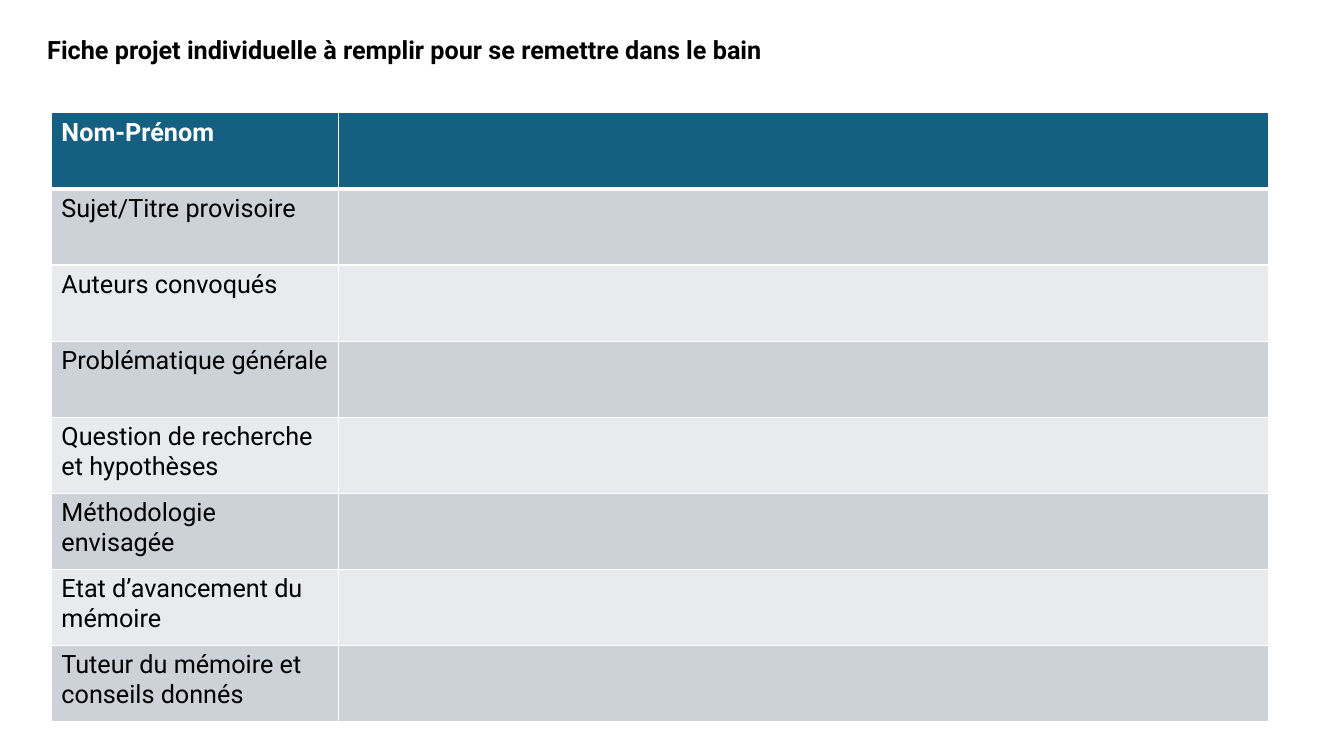
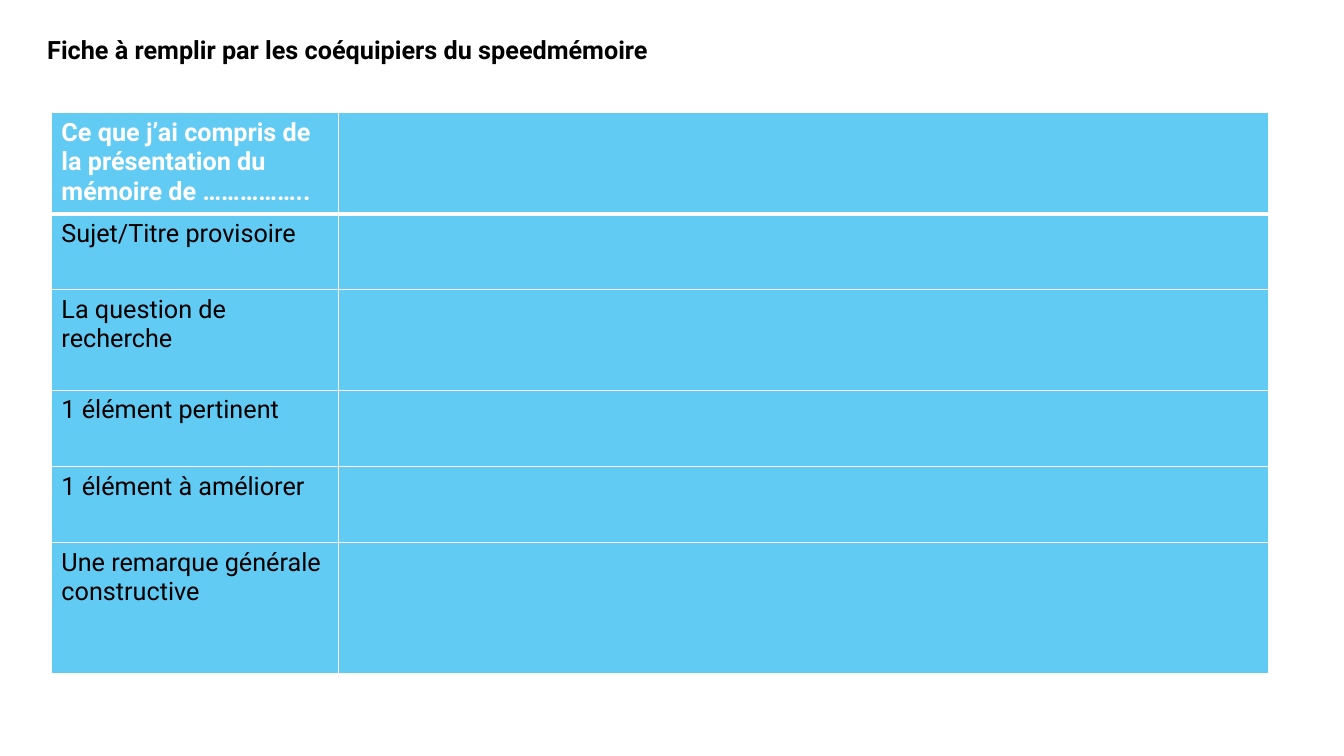
import dataclasses

import lxml.etree
import pptx
import pptx.dml.color
import pptx.enum.text
import pptx.oxml.ns
import pptx.slide
import pptx.table
import pptx.text.text
import pptx.util

Inches = pptx.util.Inches
Pt = pptx.util.Pt


@dataclasses.dataclass(frozen=True)
class Theme:
    font: str = "Roboto"
    size: float = 18
    ink: str = "000000"
    white: str = "FFFFFF"
    navy: str = "156082"
    grey: str = "CCD2D8"
    pale: str = "E8EAED"
    sky: str = "61CBF4"
    rule: float = 1
    header_rule: float = 3


@dataclasses.dataclass(frozen=True)
class Row:
    label: str
    height: float = 0.755


@dataclasses.dataclass(frozen=True)
class Form:
    title: str
    header_fill: str
    bands: tuple[str, ...]
    rows: tuple[Row, ...]


THEME = Theme()
LEFT, TOP = 0.51, 1.12
COLUMNS = (2.85, 9.22)

FORMS = (
    Form(
        "Fiche projet individuelle à remplir pour se remettre dans le bain",
        THEME.navy,
        (THEME.grey, THEME.pale),
        (
            Row("Nom-Prénom"),
            Row("Sujet/Titre provisoire"),
            Row("Auteurs convoqués"),
            Row("Problématique générale"),
            Row("Question de recherche et hypothèses"),
            Row("Méthodologie envisagée"),
            Row("Etat d’avancement du mémoire"),
            Row("Tuteur du mémoire et conseils donnés"),
        ),
    ),
    Form(
        "Fiche à remplir par les coéquipiers du speedmémoire",
        THEME.sky,
        (THEME.sky,),
        (
            Row("Ce que j’ai compris de la présentation du mémoire de ……………..", 0.99),
            Row("Sujet/Titre provisoire"),
            Row("La question de recherche", 1.0),
            Row("1 élément pertinent"),
            Row("1 élément à améliorer"),
            Row("Une remarque générale constructive", 1.3),
        ),
    ),
)


def rgb(colour: str) -> pptx.dml.color.RGBColor:
    return pptx.dml.color.RGBColor.from_string(colour)


def write(frame: pptx.text.text.TextFrame, text: str, colour: str, bold: bool) -> None:
    frame.text = text
    font = frame.paragraphs[0].runs[0].font
    font.name = THEME.font
    font.size = Pt(THEME.size)
    font.bold = bold
    font.color.rgb = rgb(colour)


def add_borders(cell: pptx.table._Cell, top: float, bottom: float) -> None:
    """Draw white borders; call before filling, since fills follow lines in the XML."""
    qn = pptx.oxml.ns.qn
    properties = cell._tc.get_or_add_tcPr()
    widths = {"L": THEME.rule, "R": THEME.rule, "T": top, "B": bottom}
    for side, width in widths.items():
        line = lxml.etree.SubElement(properties, qn(f"a:ln{side}"), w=str(Pt(width)))
        fill = lxml.etree.SubElement(line, qn("a:solidFill"))
        lxml.etree.SubElement(fill, qn("a:srgbClr"), val=THEME.white)


def add_title(slide: pptx.slide.Slide, title: str) -> None:
    box = slide.shapes.add_textbox(Inches(0.37), Inches(0.29), Inches(7.59), Inches(0.4))
    frame = box.text_frame
    frame.word_wrap = True
    frame.auto_size = pptx.enum.text.MSO_AUTO_SIZE.SHAPE_TO_FIT_TEXT
    write(frame, title, THEME.ink, True)


def add_form_table(slide: pptx.slide.Slide, form: Form) -> None:
    grid = slide.shapes.add_table(
        len(form.rows), len(COLUMNS), Inches(LEFT), Inches(TOP),
        Inches(sum(COLUMNS)), Inches(sum(row.height for row in form.rows)),
    ).table
    grid.horz_banding = False
    for column, width in zip(grid.columns, COLUMNS):
        column.width = Inches(width)
    for index, row in enumerate(form.rows):
        grid.rows[index].height = Inches(row.height)
        is_header = index == 0
        fill = form.header_fill if is_header else form.bands[(index - 1) % len(form.bands)]
        top = THEME.header_rule if index == 1 else THEME.rule
        bottom = THEME.header_rule if is_header else THEME.rule
        for cell in grid.rows[index].cells:
            add_borders(cell, top, bottom)
            cell.fill.solid()
            cell.fill.fore_color.rgb = rgb(fill)
        write(grid.cell(index, 0).text_frame, row.label,
              THEME.white if is_header else THEME.ink, is_header)


def main() -> None:
    deck = pptx.Presentation()
    deck.slide_width, deck.slide_height = Inches(13.33), Inches(7.5)
    blank = deck.slide_layouts[6]
    for form in FORMS:
        slide = deck.slides.add_slide(blank)
        add_title(slide, form.title)
        add_form_table(slide, form)
    deck.save("out.pptx")


if __name__ == "__main__":
    main()
